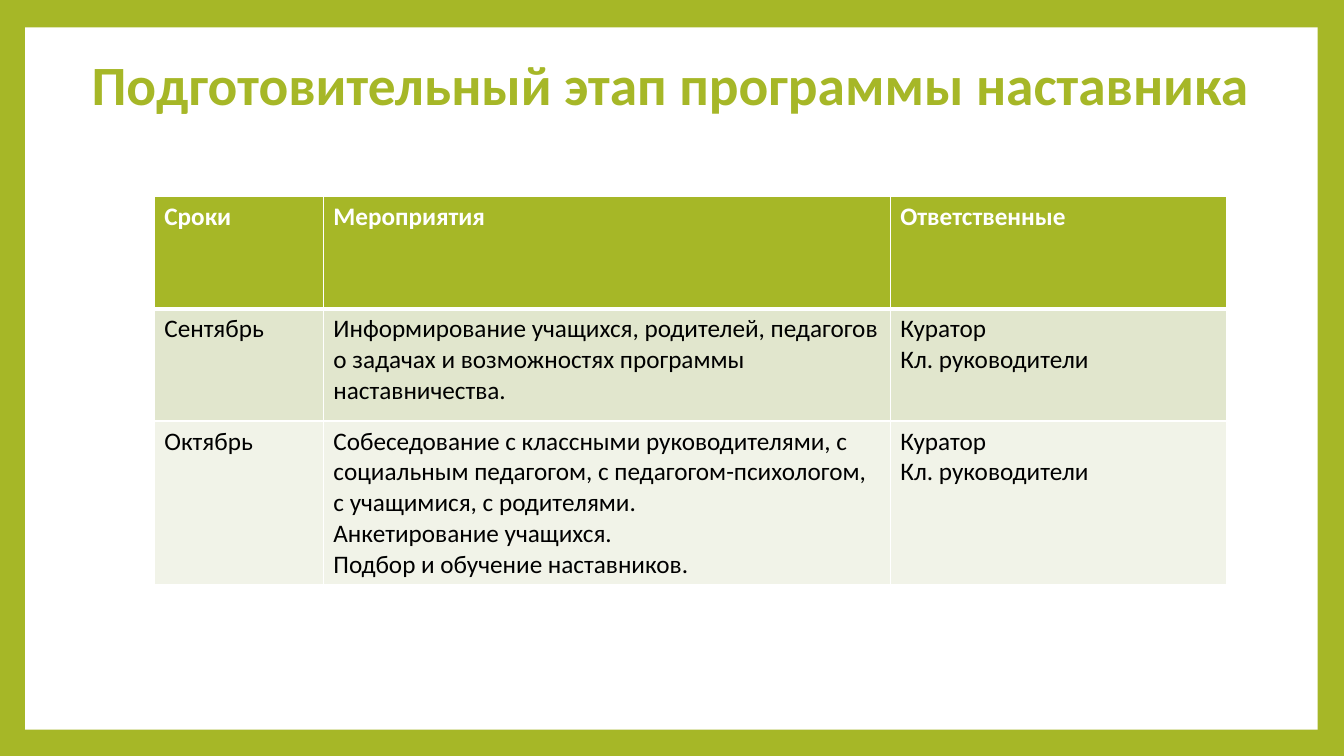
import dataclasses

import pptx
import pptx.dml.color
import pptx.enum.shapes
import pptx.enum.text
import pptx.oxml
import pptx.oxml.ns
import pptx.util

SCALE = 9525  # EMU in one px, 96 px to the inch


@dataclasses.dataclass(frozen=True)
class Theme:
    font: str = "Calibri"
    green: str = "A6B727"
    white: str = "FFFFFF"
    black: str = "000000"
    bands: tuple = ("E1E6CD", "F1F3E8")
    head: float = 39.6
    body: float = 18
    thin: int = 1
    thick: int = 3


THEME = Theme()

TITLE = "Подготовительный этап программы наставника"
PLAN = [
    ["Сроки", "Мероприятия", "Ответственные"],
    [
        "Сентябрь",
        "Информирование учащихся, родителей, педагогов о задачах "
        "и возможностях программы наставничества.",
        "Куратор\nКл. руководители",
    ],
    [
        "Октябрь",
        "Собеседование с классными руководителями, с социальным педагогом, "
        "с педагогом-психологом, с учащимися, с родителями.\n"
        "Анкетирование учащихся.\nПодбор и обучение наставников.",
        "Куратор\nКл. руководители",
    ],
]
WIDTHS = [161, 540, 320]
ROW = 107


def px(size):
    return pptx.util.Emu(size * SCALE)


def put(item, **values):
    """Set each named value as an attribute of the item."""
    for name, value in values.items():
        setattr(item, name, value)


def place(shape, left, top, width, height):
    put(shape, left=px(left), top=px(top), width=px(width), height=px(height))


def paint(fill, color):
    fill.solid()
    fill.fore_color.rgb = pptx.dml.color.RGBColor.from_string(color)


def style(frame, size, color, bold, **values):
    """Format the runs of a frame; values go to its paragraphs."""
    for para in frame.paragraphs:
        put(para, **values)
        for run in para.runs:
            put(run.font, name=THEME.font, size=pptx.util.Pt(size), bold=bold)
            paint(run.font.fill, color)


def add_panel(slide, *box):
    kind = pptx.enum.shapes.MSO_SHAPE.RECTANGLE
    panel = slide.shapes.add_shape(kind, *map(px, box))
    panel.shadow.inherit = False
    paint(panel.fill, THEME.white)
    panel.line.fill.background()
    # The panel lies behind the title.
    slide.shapes.title.element.addprevious(panel.element)


def add_title(slide, text, *box):
    title = slide.shapes.title
    place(title, *box)
    frame = title.text_frame
    put(
        frame,
        text=text,
        word_wrap=True,
        auto_size=pptx.enum.text.MSO_AUTO_SIZE.NONE,
        vertical_anchor=pptx.enum.text.MSO_ANCHOR.MIDDLE,
    )
    center = pptx.enum.text.PP_ALIGN.CENTER
    style(frame, THEME.head, THEME.green, True, alignment=center, line_spacing=0.9)


def edge(cell, **widths):
    """Draw white cell borders, keyed by side: L, R, T, B."""
    props = cell._tc.get_or_add_tcPr()
    for side, width in widths.items():
        props.append(pptx.oxml.parse_xml(
            f'<a:ln{side} {pptx.oxml.ns.nsdecls("a")} w="{pptx.util.Pt(width)}">'
            f'<a:solidFill><a:srgbClr val="{THEME.white}"/></a:solidFill>'
            f'</a:ln{side}>'
        ))


def add_table(slide, rows, left, top):
    box = left, top, sum(WIDTHS), ROW * len(rows)
    table = slide.shapes.add_table(len(rows), len(WIDTHS), *map(px, box)).table
    for col, width in zip(table.columns, WIDTHS):
        col.width = px(width)
    thin, thick = THEME.thin, THEME.thick
    for r, row in enumerate(rows):
        head = r == 0
        fill = THEME.green if head else THEME.bands[(r - 1) % 2]
        color = THEME.white if head else THEME.black
        for c, text in enumerate(row):
            cell = table.cell(r, c)
            cell.text = text
            style(cell.text_frame, THEME.body, color, head)
            edge(cell, L=thin, R=thin, T=thick if r == 1 else thin,
                 B=thick if head else thin)
            paint(cell.fill, fill)


def main():
    deck = pptx.Presentation()
    put(deck, slide_width=px(1280), slide_height=px(720))
    slide = deck.slides.add_slide(deck.slide_layouts.get_by_name("Title Only"))
    paint(slide.background.fill, THEME.green)
    add_panel(slide, 24, 26, 1231, 669)
    add_title(slide, TITLE, 31, 34, 1215, 99)
    add_table(slide, PLAN, 147, 187)
    deck.save("out.pptx")


if __name__ == "__main__":
    main()
